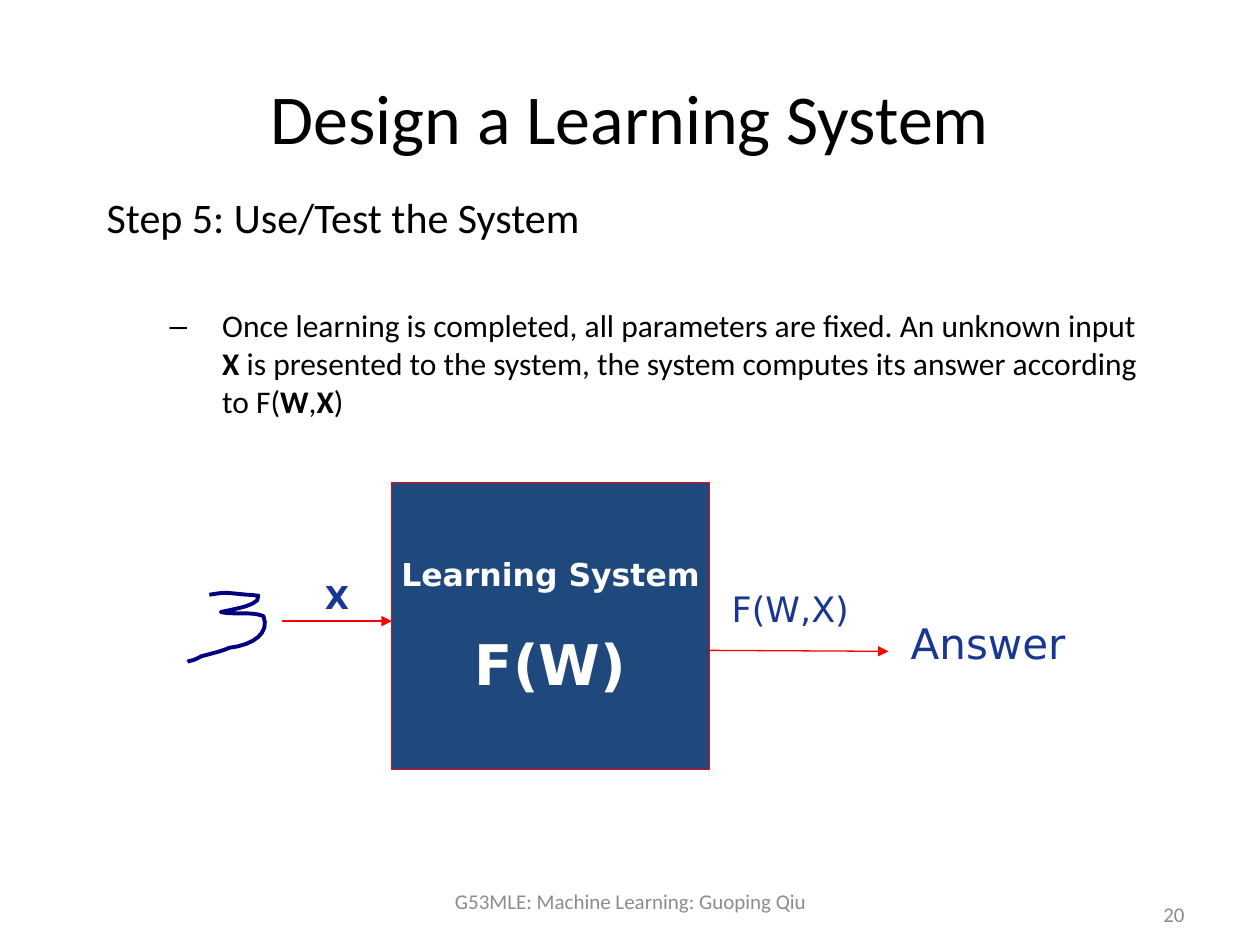
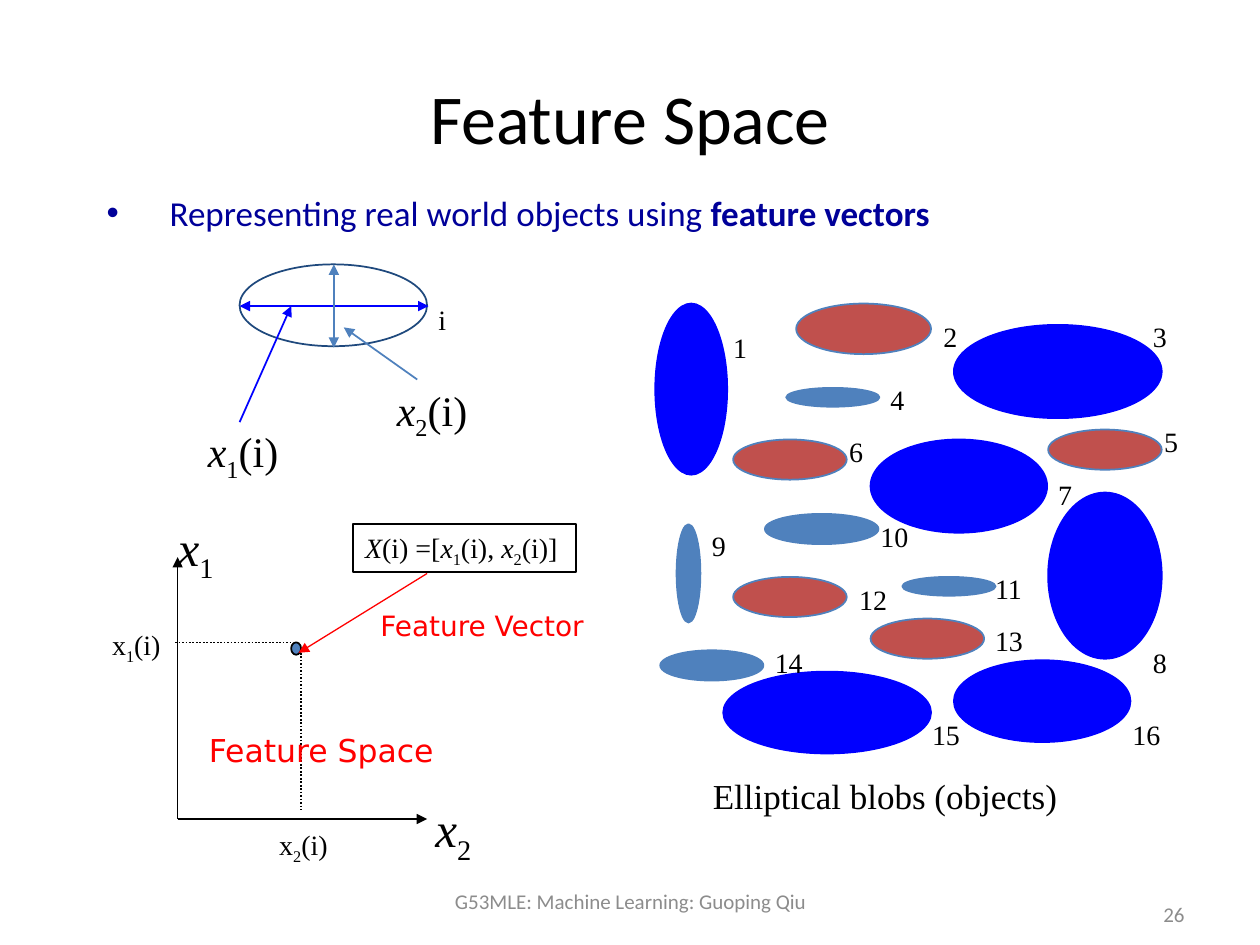
from dataclasses import dataclass

from lxml.etree import SubElement
from pptx import Presentation
from pptx.dml.color import RGBColor as Rgb
from pptx.enum.dml import MSO_LINE as Dash
from pptx.enum.shapes import MSO_CONNECTOR as Connector, MSO_SHAPE as Preset
from pptx.enum.text import MSO_ANCHOR as Anchor, MSO_AUTO_SIZE as AutoSize, PP_ALIGN as Align
from pptx.oxml.ns import qn
from pptx.util import Cm, Pt


@dataclass(frozen=True)
class Theme:
    black: Rgb = Rgb(0x00, 0x00, 0x00)
    white: Rgb = Rgb(0xFF, 0xFF, 0xFF)
    grey: Rgb = Rgb(0x8C, 0x8C, 0x8C)
    red: Rgb = Rgb(0xFF, 0x00, 0x00)
    brick: Rgb = Rgb(0xC0, 0x50, 0x4D)
    blue: Rgb = Rgb(0x00, 0x00, 0xFF)
    steel: Rgb = Rgb(0x4F, 0x81, 0xBD)
    navy: Rgb = Rgb(0x1F, 0x49, 0x7D)
    ink: Rgb = Rgb(0x00, 0x00, 0x80)
    signal: Rgb = Rgb(0x19, 0x36, 0x93)
    statement: Rgb = Rgb(0x00, 0x00, 0x99)
    main_font: str = "Calibri"
    label_font: str = "DejaVu Sans"
    math_font: str = "Times New Roman"
    title: int = 40
    formula: int = 32
    axis: int = 28
    step: int = 24
    lead: int = 20
    body: int = 18
    small: int = 16
    footer: int = 12
    thin: float = 0.75
    line: float = 1
    pen: float = 2.25


THEME = Theme()
TITLE_ONLY = 5
TITLE_AREA = (1.27, 0.76, 22.86, 3.18)
BODY_AREA = (1.9, 3.73, 21.59, 12.93)
FOOTER_AREA = (8.69, 17.65, 8.05, 1.02)
NUMBER_AREA = (18.21, 17.91, 5.92, 1.02)
FOOTER = "G53MLE: Machine Learning: Guoping Qiu"

# Handwritten digit: a start point, then two control points and an end point per curve
DIGIT_START = (4.22, 11.99)
DIGIT_CURVES = [
    ((4.55, 11.94), (4.47, 11.94), (4.98, 11.99)),
    ((5.05, 11.99), (5.21, 12.01), (5.21, 12.01)),
    ((5.18, 12.07), (5.21, 12.09), (5.16, 12.12)),
    ((5.03, 12.24), (4.65, 12.29), (4.45, 12.34)),
    ((4.75, 12.4), (5.05, 12.32), (5.31, 12.42)),
    ((5.44, 12.75), (5.13, 13.0), (4.62, 13.06)),
    ((4.47, 13.13), (4.24, 13.18), (4.06, 13.23)),
    ((4.01, 13.26), (3.96, 13.28), (3.89, 13.31)),
    ((3.86, 13.31), (3.78, 13.34), (3.78, 13.34)),
]

# Fill, blob area and label corner, in the order of the numbers 1 to 16
BLOBS = [
    (THEME.blue, (13.21, 6.12, 1.45, 3.45), (14.53, 6.53)),
    (THEME.brick, (16.05, 6.12, 2.72, 1.02), (18.77, 6.32)),
    (THEME.blue, (19.23, 6.55, 4.19, 1.88), (22.99, 6.32)),
    (THEME.steel, (15.85, 7.82, 1.88, 0.38), (17.7, 7.59)),
    (THEME.brick, (21.13, 8.66, 2.29, 0.81), (23.22, 8.43)),
    (THEME.brick, (14.78, 8.86, 2.29, 0.81), (16.87, 8.64)),
    (THEME.blue, (17.55, 8.86, 3.56, 1.88), (21.08, 9.5)),
    (THEME.blue, (21.13, 9.93, 2.29, 3.35), (22.99, 12.88)),
    (THEME.steel, (13.64, 10.57, 0.48, 1.98), (14.1, 10.54)),
    (THEME.steel, (15.42, 10.36, 2.29, 0.61), (17.5, 10.34)),
    (THEME.steel, (18.19, 11.63, 1.88, 0.38), (19.81, 11.4)),
    (THEME.brick, (14.78, 11.63, 2.29, 0.81), (17.07, 11.61)),
    (THEME.brick, (17.55, 12.47, 2.29, 0.81), (19.81, 12.45)),
    (THEME.steel, (13.31, 13.11, 2.08, 0.61), (15.37, 12.88)),
    (THEME.blue, (14.58, 13.54, 4.19, 1.65), (18.54, 14.35)),
    (THEME.blue, (19.23, 13.31, 3.56, 1.65), (22.58, 14.35)),
]


def lengths(values):
    return [Cm(value) for value in values]


def write(frame, text, *, size=THEME.small, font=THEME.main_font, colour=THEME.black,
          bold=False, align=Align.LEFT, before=0, bullet=None, indent=(0, 0)):
    """Add a paragraph; text is a string or (string, mark) spans marked bold, italic or sub."""
    para = frame.paragraphs[0]
    if para.runs:
        para = frame.add_paragraph()
    para.alignment = align
    para.space_before = Pt(before)
    for words, mark in [(text, "")] if isinstance(text, str) else text:
        span = para.add_run()
        span.text = words
        span.font.size = Pt(size)
        span.font.name = font
        span.font.color.rgb = colour
        span.font.bold = bold or mark == "bold"
        span.font.italic = mark == "italic"
        if mark == "sub":
            span.font._element.set("baseline", "-25000")
    if bullet:
        margin, first_line = lengths(indent)
        properties = para._p.get_or_add_pPr()
        properties.set("marL", str(margin))
        properties.set("indent", str(first_line))
        SubElement(properties, qn("a:buFont")).set("typeface", "Arial")
        SubElement(properties, qn("a:buChar")).set("char", bullet)


def add_text(slide, area, text=None, wrap=False, anchor=Anchor.TOP, **style):
    frame = slide.shapes.add_textbox(*lengths(area)).text_frame
    frame.word_wrap = wrap
    frame.vertical_anchor = anchor
    frame.auto_size = AutoSize.NONE if wrap else AutoSize.SHAPE_TO_FIT_TEXT
    if text:
        write(frame, text, **style)
    return frame


def add_math(slide, area, text, **style):
    return add_text(slide, area, text, font=THEME.math_font, **style)


def add_label(slide, area, text, **style):
    return add_text(slide, area, text, font=THEME.label_font, **style)


def set_outline(shape, colour, width):
    shape.line.color.rgb = colour
    shape.line.width = Pt(width)


def add_box(slide, preset, area, fill, outline, width=THEME.line):
    box = slide.shapes.add_shape(preset, *lengths(area))
    box.shadow.inherit = False
    if fill is None:
        box.fill.background()
    else:
        box.fill.solid()
        box.fill.fore_color.rgb = fill
    set_outline(box, outline, width)
    box.text_frame.word_wrap = False
    box.text_frame.vertical_anchor = Anchor.MIDDLE
    return box


def add_line(slide, start, end, colour, width=THEME.line, dash=None, ends=("tailEnd",)):
    line = slide.shapes.add_connector(Connector.STRAIGHT, *lengths(start + end))
    set_outline(line, colour, width)
    if dash:
        line.line.dash_style = dash
    properties = line._element.spPr
    for end_name in ends:
        SubElement(properties.get_or_add_ln(), qn(f"a:{end_name}")).set("type", "triangle")
    SubElement(properties, qn("a:effectLst"))


def curve_points(start, curves, steps=8):
    """Follow cubic curves in short straight steps."""
    points = []
    for first, second, end in curves:
        for step in range(1, steps + 1):
            t = step / steps
            weights = ((1 - t) ** 3, 3 * t * (1 - t) ** 2, 3 * t * t * (1 - t), t ** 3)
            corners = (start, first, second, end)
            points.append(tuple(
                Cm(sum(weight * corner[axis] for weight, corner in zip(weights, corners)))
                for axis in (0, 1)))
        start = end
    return points


def add_digit(slide):
    builder = slide.shapes.build_freeform(*lengths(DIGIT_START))
    builder.add_line_segments(curve_points(DIGIT_START, DIGIT_CURVES), close=False)
    digit = builder.convert_to_shape()
    digit.shadow.inherit = False
    digit.fill.background()
    set_outline(digit, THEME.ink, THEME.pen)


def feature(index, mark="italic"):
    return [("x", mark), (index, "sub")]


def feature_of_i(index, mark="italic"):
    return feature(index, mark) + [("(i)", "")]


def add_page(deck, title, number):
    page = deck.slides.add_slide(deck.slide_layouts[TITLE_ONLY])
    heading = page.shapes.title
    heading.left, heading.top, heading.width, heading.height = lengths(TITLE_AREA)
    heading.text_frame.vertical_anchor = Anchor.MIDDLE
    write(heading.text_frame, title, size=THEME.title, align=Align.CENTER)
    for area, text, align in ((FOOTER_AREA, FOOTER, Align.CENTER),
                              (NUMBER_AREA, number, Align.RIGHT)):
        add_text(page, area, text, wrap=True, anchor=Anchor.MIDDLE,
                 size=THEME.footer, colour=THEME.grey, align=align)
    return page


def add_learning_system(page):
    system = add_box(page, Preset.RECTANGLE, (7.9, 9.73, 6.4, 5.79),
                     THEME.navy, THEME.red, THEME.thin)
    style = dict(font=THEME.label_font, colour=THEME.white, bold=True, align=Align.CENTER)
    write(system.text_frame, "Learning System", size=THEME.body, **style)
    write(system.text_frame, "F(W)", size=THEME.formula, before=21, **style)
    add_digit(page)
    add_line(page, (5.69, 12.52), (7.9, 12.52), THEME.red, THEME.thin)
    add_line(page, (14.3, 13.11), (17.91, 13.13), THEME.red, THEME.thin)
    add_label(page, (6.3, 11.53, 0.99, 1.02), "X", size=THEME.body,
              colour=THEME.signal, bold=True)
    add_label(page, (14.5, 11.71, 3, 1.09), "F(W,X)", size=THEME.lead, colour=THEME.signal)
    add_label(page, (18.11, 12.32, 3.63, 1.27), "Answer", size=THEME.step, colour=THEME.signal)


def add_blobs(page):
    for fill, area, _ in BLOBS:
        outline = THEME.blue if fill == THEME.blue else THEME.steel
        add_box(page, Preset.OVAL, area, fill, outline)
    for number, (_, _, corner) in enumerate(BLOBS, 1):
        width = 0.79 if number < 10 else 1.07
        add_math(page, (*corner, width, 0.91), str(number))
    add_math(page, (14.12, 15.49, 10.36, 1.09), "Elliptical blobs (objects)",
             wrap=True, size=THEME.lead)


def add_measured_blob(page):
    both = ("headEnd", "tailEnd")
    add_box(page, Preset.OVAL, (4.83, 5.33, 3.78, 1.65), None, THEME.navy)
    add_line(page, (4.83, 6.17), (8.64, 6.17), THEME.blue, ends=both)
    add_line(page, (6.73, 5.33), (6.73, 7.01), THEME.steel, ends=both)
    add_line(page, (4.83, 8.51), (5.87, 6.17), THEME.blue)
    add_line(page, (8.41, 7.65), (6.93, 6.6), THEME.steel)
    add_math(page, (7.75, 7.62, 1.96, 1.27), feature_of_i("2"), size=THEME.step)
    add_math(page, (3.94, 8.46, 1.96, 1.27), feature_of_i("1"), size=THEME.step)
    add_math(page, (8.59, 5.97, 0.66, 0.91), "i")


def add_feature_plot(page):
    vector = add_box(page, Preset.RECTANGLE, (7.11, 10.57, 4.5, 0.97), None, THEME.black)
    vector.text_frame.vertical_anchor = Anchor.TOP
    write(vector.text_frame,
          [("X", "italic"), ("(i) =[", ""), *feature_of_i("1"), (", ", ""),
           *feature_of_i("2"), ("]", "")], font=THEME.math_font)
    origin = (3.58, 16.51)
    add_line(page, origin, (3.58, 11.23), THEME.black)
    add_line(page, origin, (8.61, 16.51), THEME.black)
    add_math(page, (3.33, 10.31, 1.27, 1.42), feature("1"), size=THEME.axis)
    add_math(page, (8.53, 15.98, 1.27, 1.42), feature("2"), size=THEME.axis)
    add_box(page, Preset.OVAL, (5.87, 12.95, 0.2, 0.25), THEME.steel, THEME.black)
    for start, end in (((3.53, 12.95), (5.87, 12.95)), ((6.07, 13.16), (6.07, 16.33))):
        add_line(page, start, end, THEME.black, dash=Dash.ROUND_DOT, ends=())
    add_math(page, (5.38, 16.56, 1.52, 0.91), feature_of_i("2", ""))
    add_math(page, (2.01, 12.52, 1.52, 0.91), feature_of_i("1", ""))
    add_label(page, (3.96, 14.61, 5.11, 1.02), "Feature Space",
              size=THEME.body, colour=THEME.red)
    add_line(page, (8.61, 11.56), (6.02, 13.16), THEME.red, THEME.thin)
    add_label(page, (7.42, 12.14, 4.7, 0.94), "Feature Vector", colour=THEME.red)


def main():
    deck = Presentation()
    deck.slide_width, deck.slide_height = Cm(25.4), Cm(19.05)

    page = add_page(deck, "Design a Learning System", "20")
    body = add_text(page, BODY_AREA, "Step 5: Use/Test the System", wrap=True, size=THEME.step)
    write(body, [("Once learning is completed, all parameters are fixed. An unknown input ", ""),
                 ("X", "bold"),
                 (" is presented to the system, the system computes its answer according to F(", ""),
                 ("W", "bold"), (",", ""), ("X", "bold"), (")", "")],
          size=THEME.body, before=37, bullet="–", indent=(2.33, -1.06))
    add_learning_system(page)

    page = add_page(deck, "Feature Space", "26")
    add_text(page, BODY_AREA,
             [("Representing real world objects using ", ""), ("feature vectors", "bold")],
             wrap=True, size=THEME.lead, colour=THEME.statement, bullet="•", indent=(1.27, -1.27))
    add_blobs(page)
    add_measured_blob(page)
    add_feature_plot(page)

    deck.save("out.pptx")


if __name__ == "__main__":
    main()
